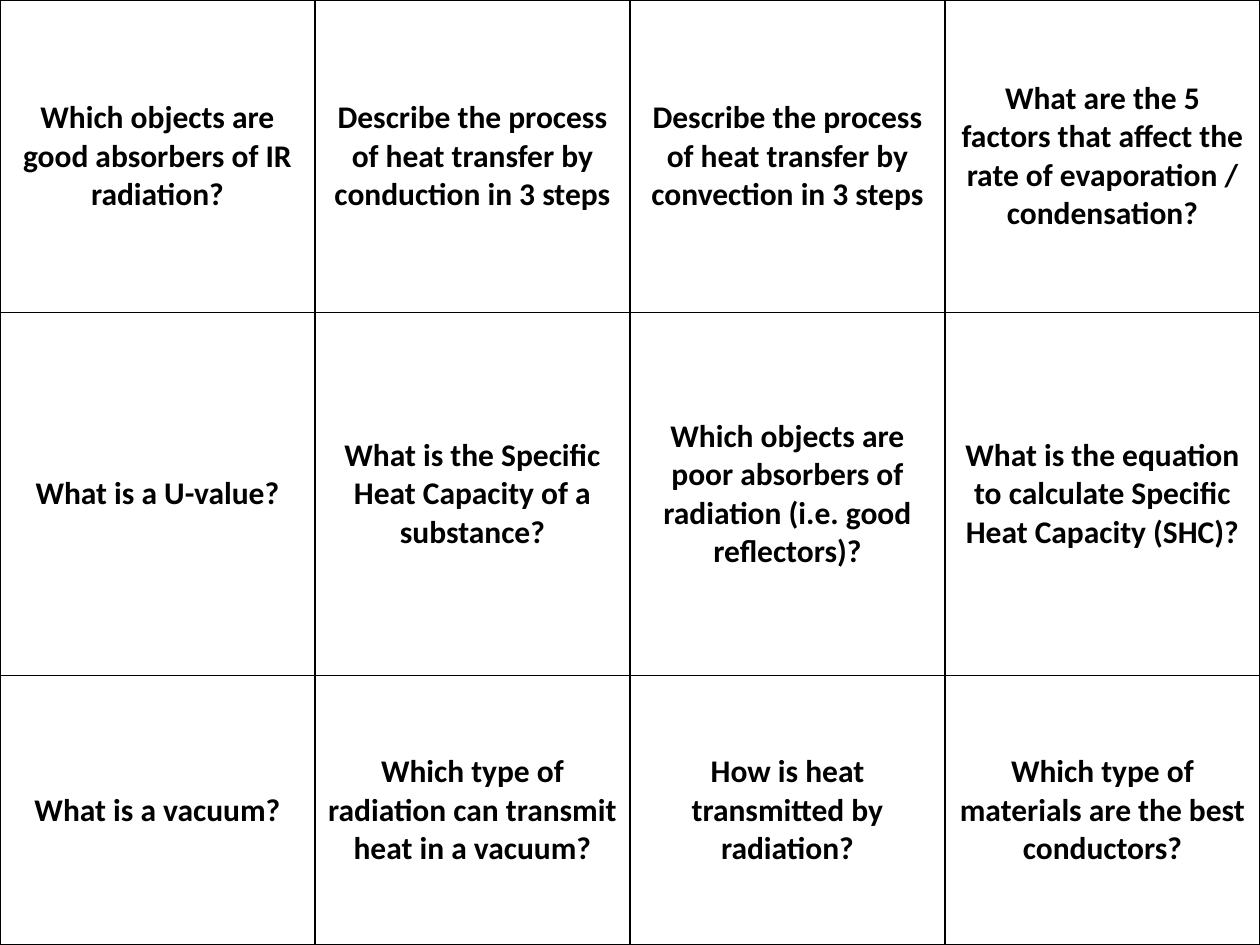
from dataclasses import dataclass

from lxml import etree
from pptx import Presentation
from pptx.dml.color import RGBColor
from pptx.enum.text import MSO_ANCHOR, PP_ALIGN
from pptx.oxml.ns import qn
from pptx.table import _Cell
from pptx.util import Cm, Pt

CENTER = PP_ALIGN.CENTER
MIDDLE = MSO_ANCHOR.MIDDLE
BLANK_LAYOUT = 6
BORDER_TAGS = ("a:lnL", "a:lnR", "a:lnT", "a:lnB")


@dataclass(frozen=True)
class Theme:
    font: str = "Calibri"
    size: Pt = Pt(18)
    ink: str = "000000"
    border: Pt = Pt(1)


@dataclass(frozen=True)
class QuestionRow:
    height: float  # cm
    questions: tuple[str, ...]


THEME = Theme()
WIDTH, HEIGHT = 25.4, 19.05  # cm

ROWS = (
    QuestionRow(6.3, (
        "Which objects are good absorbers of IR radiation?",
        "Describe the process of heat transfer by conduction in 3 steps",
        "Describe the process of heat transfer by convection in 3 steps",
        "What are the 5 factors that affect the rate of evaporation / condensation?",
    )),
    QuestionRow(7.32, (
        "What is a U-value?",
        "What is the Specific Heat Capacity of a substance?",
        "Which objects are poor absorbers of radiation (i.e. good reflectors)?",
        "What is the equation to calculate Specific Heat Capacity (SHC)?",
    )),
    QuestionRow(5.43, (
        "What is a vacuum?",
        "Which type of radiation can transmit heat in a vacuum?",
        "How is heat transmitted by radiation?",
        "Which type of materials are the best conductors?",
    )),
)


def set_borders(cell: _Cell) -> None:
    """Draw a solid line on all four sides; lines precede the fill in tcPr."""
    tc_pr = cell._tc.get_or_add_tcPr()
    for i, tag in enumerate(BORDER_TAGS):
        ln = etree.Element(qn(tag), w=str(int(THEME.border)))
        fill = etree.SubElement(ln, qn("a:solidFill"))
        etree.SubElement(fill, qn("a:srgbClr"), val=THEME.ink)
        tc_pr.insert(i, ln)


def fill_cell(cell: _Cell, question: str) -> None:
    """Write one centred question into an unfilled, bordered cell."""
    cell.vertical_anchor = MIDDLE
    cell.fill.background()
    set_borders(cell)
    p = cell.text_frame.paragraphs[0]
    p.alignment = CENTER
    r = p.add_run()
    r.text = question
    for name, value in {"name": THEME.font, "size": THEME.size, "bold": True}.items():
        setattr(r.font, name, value)
    r.font.color.rgb = RGBColor.from_string(THEME.ink)


def main() -> None:
    prs = Presentation()
    prs.slide_width, prs.slide_height = Cm(WIDTH), Cm(HEIGHT)
    s = prs.slides.add_slide(prs.slide_layouts[BLANK_LAYOUT])

    # Question grid covering the whole slide, with equal columns
    n_cols = len(ROWS[0].questions)
    table = s.shapes.add_table(
        len(ROWS), n_cols, Cm(0), Cm(0), Cm(WIDTH), Cm(HEIGHT)
    ).table
    table.first_row = table.horz_banding = False
    for col in table.columns:
        col.width = Cm(WIDTH / n_cols)

    # Questions
    for i, row in enumerate(ROWS):
        table.rows[i].height = Cm(row.height)
        for j, question in enumerate(row.questions):
            fill_cell(table.cell(i, j), question)

    prs.save("out.pptx")


if __name__ == "__main__":
    main()
